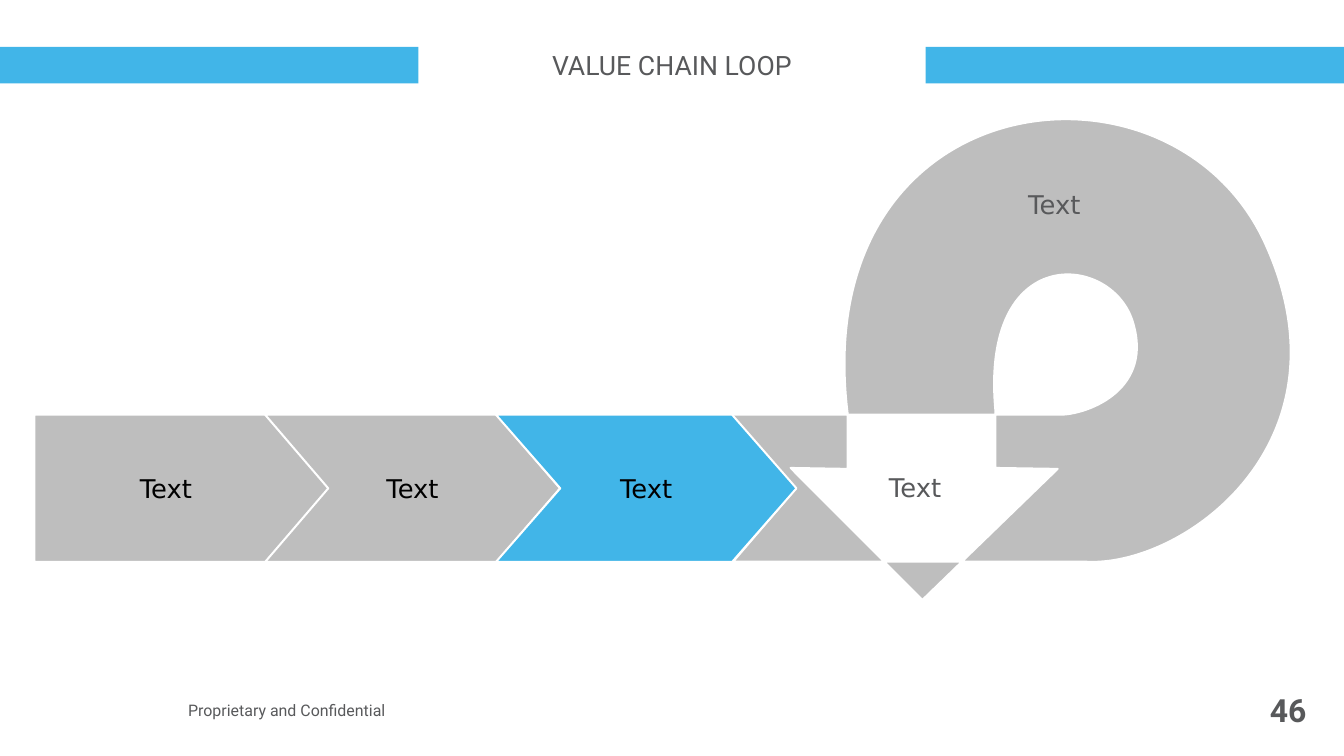
import dataclasses

import pptx
import pptx.dml.color
import pptx.enum.shapes
import pptx.enum.text
import pptx.oxml
import pptx.oxml.ns
import pptx.util

Pt = pptx.util.Pt
Align = pptx.enum.text.PP_ALIGN
Anchor = pptx.enum.text.MSO_ANCHOR
Preset = pptx.enum.shapes.MSO_SHAPE


@dataclasses.dataclass(frozen=True)
class Theme:
    blue: str = "41B5E8"
    grey: str = "BEBEBE"
    white: str = "FFFFFF"
    black: str = "000000"
    ink: str = "58595B"
    heading_font: str = "Roboto"
    label_font: str = "DejaVu Sans"
    title_size: float = 20
    label_size: float = 19.4
    footer_size: float = 12
    page_size: float = 24
    outline: float = 1.5


THEME = Theme()
SLIDE_WIDTH, SLIDE_HEIGHT = 1010.88, 568.8
CHAIN_TOP, CHAIN_HEIGHT = 312, 110.8

# One point makes a straight segment; three make a Bézier curve.
LOOP_START = (548.6, 312)
LOOP_SEGMENTS = [
    [(598.3, 367.9)],
    [(551.5, 422.6)],
    [(815.8, 422.6)],
    [(889.2, 427.7), (1021.7, 332.6), (950.4, 180.7)],
    [(878.4, 29.5), (607.4, 62.6), (637.6, 311)],
    [(637.6, 352.8)],
    [(594.7, 352.1)],
    [(693.8, 451.4)],
    [(795.6, 352.8)],
    [(748.8, 352.1)],
    [(748.8, 309.6)],
    [(736.6, 182.2), (835.2, 190.1), (851.8, 241.2)],
    [(868.3, 292.3), (820.1, 311), (799.2, 312)],
    [LOOP_START],
]


def rgb(colour):
    return pptx.dml.color.RGBColor.from_string(colour)


def paint(shape, fill=None, line=None):
    shape.shadow.inherit = False
    if fill:
        shape.fill.solid()
        shape.fill.fore_color.rgb = rgb(fill)
    else:
        shape.fill.background()
    if line:
        shape.line.color.rgb = rgb(line)
        shape.line.width = Pt(THEME.outline)
    else:
        shape.line.fill.background()


def write(shape, text, *, size=THEME.label_size, font=THEME.label_font,
          colour=THEME.ink, bold=False, align=Align.CENTER,
          anchor=Anchor.MIDDLE, inset=(3.6, 3.6), wrap=False):
    frame = shape.text_frame
    frame.text = text
    frame.auto_size = pptx.enum.text.MSO_AUTO_SIZE.NONE
    frame.word_wrap = wrap
    frame.vertical_anchor = anchor
    frame.margin_left = frame.margin_right = Pt(inset[0])
    frame.margin_top = frame.margin_bottom = Pt(inset[1])
    paragraph = frame.paragraphs[0]
    paragraph.alignment = align
    paragraph.font.size = Pt(size)
    paragraph.font.name = font
    paragraph.font.bold = bold
    paragraph.font.color.rgb = rgb(colour)


def add_preset(slide, preset, box, fill=None, line=None):
    shape = slide.shapes.add_shape(preset, *map(Pt, box))
    paint(shape, fill, line)
    return shape


def add_label(slide, box, text, **text_format):
    write(slide.shapes.add_textbox(*map(Pt, box)), text, **text_format)


def add_header(slide):
    band = add_preset(slide, Preset.RECTANGLE, (0, 35.3, SLIDE_WIDTH, 27.4), THEME.blue)
    title = slide.shapes.title
    title.left, title.top, title.width, title.height = map(
        Pt, (314.6, 29.5, 381.6, 38.9))
    title.fill.solid()
    title.fill.fore_color.rgb = rgb(THEME.white)
    write(title, "VALUE CHAIN LOOP", size=THEME.title_size,
          font=THEME.heading_font, inset=(7.2, 7.2), wrap=True)
    title._element.addprevious(band._element)


def add_footer(slide):
    page = add_preset(slide, Preset.ROUNDED_RECTANGLE, (941, 519.4, 43.2, 29.5))
    write(page, "46", size=THEME.page_size, font=THEME.heading_font,
          bold=True, align=Align.RIGHT, inset=(0, 0))
    add_label(slide, (138.6, 511, 251.3, 46.8), "Proprietary and Confidential",
              size=THEME.footer_size, font=THEME.heading_font,
              align=Align.LEFT, inset=(2.9, 2.9), wrap=True)


def add_loop(slide):
    points = [point for segment in LOOP_SEGMENTS for point in segment]
    outline = slide.shapes.build_freeform(*map(Pt, LOOP_START))
    outline.add_line_segments([(Pt(x), Pt(y)) for x, y in points], close=True)
    loop = outline.convert_to_shape()
    paint(loop, THEME.grey, THEME.white)

    lines = iter(list(loop._element.iter(pptx.oxml.ns.qn("a:lnTo"))))
    for segment in LOOP_SEGMENTS:
        parts = [next(lines) for _ in segment]
        if len(parts) == 3:
            curve = pptx.oxml.parse_xml(
                f"<a:cubicBezTo {pptx.oxml.ns.nsdecls('a')}/>")
            parts[0].addprevious(curve)
            for part in parts:
                curve.append(part[0])
                part.getparent().remove(part)


def add_link(slide, preset, left, width, point, fill):
    link = add_preset(slide, preset, (left, CHAIN_TOP, width, CHAIN_HEIGHT),
                      fill, THEME.white)
    link.adjustments[0] = point
    write(link, "Text", colour=THEME.black, inset=(7.2, 3.6))


def main():
    deck = pptx.Presentation()
    deck.slide_width, deck.slide_height = Pt(SLIDE_WIDTH), Pt(SLIDE_HEIGHT)
    slide = deck.slides.add_slide(deck.slide_layouts[5])

    add_header(slide)
    add_footer(slide)
    add_loop(slide)
    for link in [
        (Preset.PENTAGON, 25.9, 221.8, 0.433, THEME.grey),
        (Preset.CHEVRON, 199.4, 221.8, 0.429, THEME.grey),
        (Preset.CHEVRON, 373, 226.1, 0.437, THEME.blue),
    ]:
        add_link(slide, *link)
    add_label(slide, (769.8, 132.5, 67.7, 42.5), "Text", align=Align.LEFT, wrap=True)
    add_label(slide, (664.2, 351.4, 48.2, 31), "Text", anchor=Anchor.TOP)

    deck.save("out.pptx")


if __name__ == "__main__":
    main()
